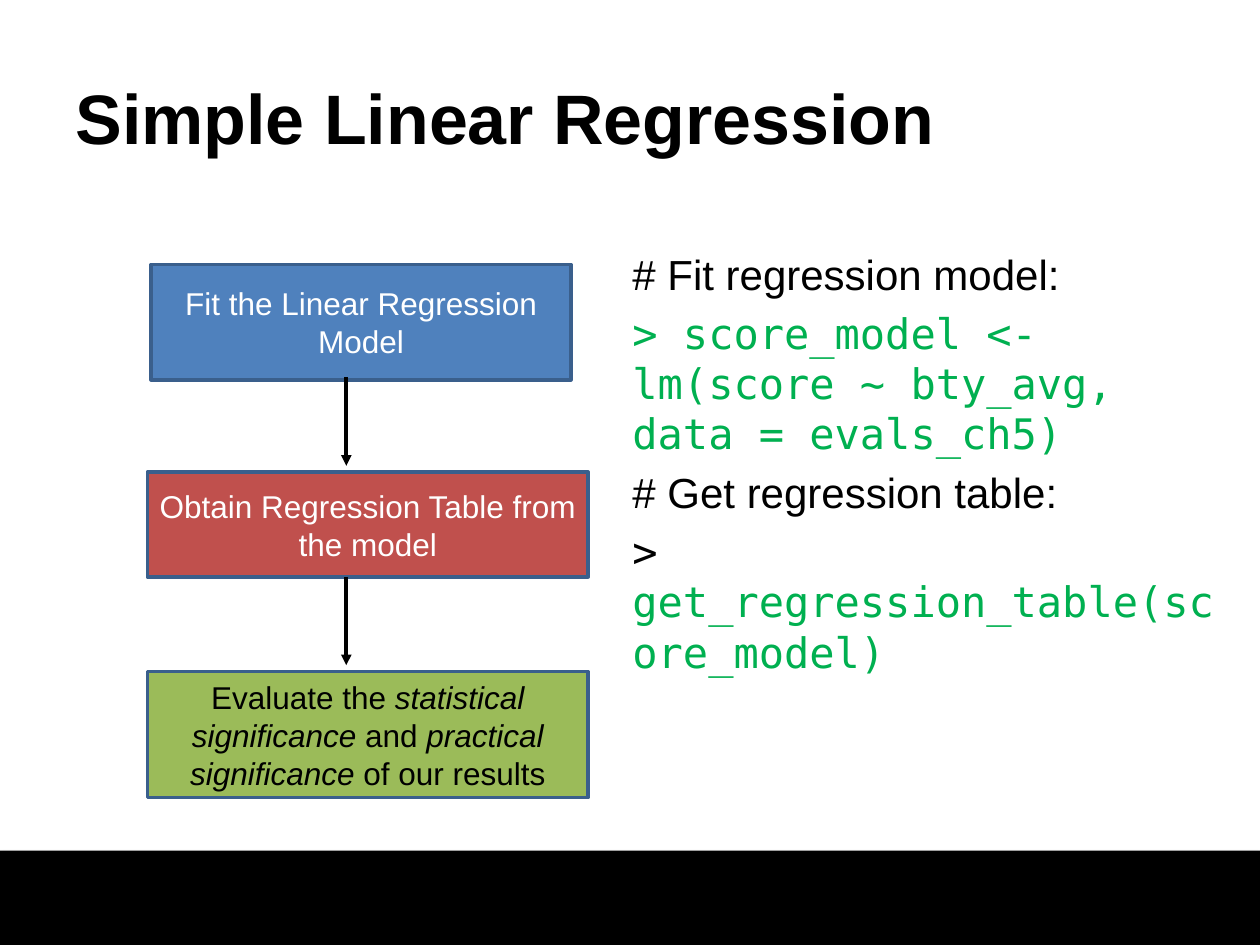
import pptx
import pptx.util
import pptx.dml.color
import pptx.enum.shapes
import pptx.enum.text
import pptx.oxml
import pptx.oxml.ns

Cm = pptx.util.Cm
Pt = pptx.util.Pt
RECT = pptx.enum.shapes.MSO_SHAPE.RECTANGLE
MIDDLE = pptx.enum.text.MSO_ANCHOR.MIDDLE
ALIGN = pptx.enum.text.PP_ALIGN
SANS = "Arial"
MONO = "DejaVu Sans Mono"
COLORS = {
    "black": "000000",
    "white": "FFFFFF",
    "blue": "4F81BD",
    "red": "C0504D",
    "green": "9BBB59",
    "outline": "3A5F8C",
    "code": "00B050",
}
STEPS = [
    (0.08, 0, 8.46, 2.33, "blue", "white",
     [("Fit the Linear Regression Model", False)]),
    (0, 4.19, 8.89, 2.11, "red", "white",
     [("Obtain Regression Table from the model", False)]),
    (0, 8.21, 8.89, 2.54, "green", "black",
     [("Evaluate the ", False), ("statistical significance", True),
      (" and ", False), ("practical significance", True),
      (" of our results", False)]),
]
CODE = [
    (SANS, [("# Fit regression model:", "black")]),
    (MONO, [("> score_model <- lm(score ~ bty_avg, data = evals_ch5)", "code")]),
    (SANS, [("# Get regression table:", "black")]),
    (MONO, [("> ", "black"), ("get_regression_table(score_model)", "code")]),
]


def rgb(name):
    return pptx.dml.color.RGBColor.from_string(COLORS[name])


def set_font(font, size, color, name=SANS):
    font.name = name
    font.size = Pt(size)
    font.color.rgb = rgb(color)


def add_effects(sp, content=""):
    ns = pptx.oxml.ns.nsdecls("a")
    xml = f"<a:effectLst {ns}>{content}</a:effectLst>"
    sp._element.spPr.append(pptx.oxml.parse_xml(xml))


def add_box(slide, left, top, width, height, fill):
    sp = slide.shapes.add_shape(RECT, Cm(left), Cm(top), Cm(width), Cm(height))
    sp.fill.solid()
    sp.fill.fore_color.rgb = rgb(fill)
    return sp


def add_footer(slide, left, top, width, height):
    sp = add_box(slide, left, top, width, height, "black")
    sp.line.fill.background()
    add_effects(
        sp,
        f'<a:outerShdw blurRad="{Pt(3.1)}" dist="{Pt(1.8)}" dir="5400000" rotWithShape="0">'
        '<a:srgbClr val="000000"><a:alpha val="35000"/></a:srgbClr></a:outerShdw>',
    )


def add_title(slide, left, top, width, height):
    sp = slide.shapes.title
    sp.left, sp.top, sp.width, sp.height = Cm(left), Cm(top), Cm(width), Cm(height)
    tf = sp.text_frame
    tf.text = "Simple Linear Regression"
    tf.vertical_anchor = MIDDLE
    p = tf.paragraphs[0]
    p.alignment = ALIGN.LEFT
    set_font(p.font, 40, "black")
    p.font.bold = True


def add_code(slide, left, top, width, height):
    tf = slide.shapes.add_textbox(Cm(left), Cm(top), Cm(width), Cm(height)).text_frame
    tf.word_wrap = True
    for i, (font, runs) in enumerate(CODE):
        p = tf.add_paragraph() if i else tf.paragraphs[0]
        p.space_before = Pt(4.8 if i else 0)
        for text, color in runs:
            r = p.add_run()
            r.text = text
            set_font(r.font, 24, color, font)


def add_step(slide, left, top, width, height, fill, color, runs):
    sp = add_box(slide, left, top, width, height, fill)
    sp.shadow.inherit = False
    sp.line.color.rgb = rgb("outline")
    sp.line.width = Pt(2)
    tf = sp.text_frame
    tf.word_wrap = True
    tf.vertical_anchor = MIDDLE
    p = tf.paragraphs[0]
    p.alignment = ALIGN.CENTER
    set_font(p.font, 18, color)
    for text, italic in runs:
        r = p.add_run()
        r.text = text
        r.font.italic = italic


def add_arrow(slide, x, top, bottom):
    cx = slide.shapes.add_connector(
        pptx.enum.shapes.MSO_CONNECTOR.STRAIGHT, Cm(x), Cm(top), Cm(x), Cm(bottom))
    cx.line.color.rgb = rgb("black")
    cx.line.width = Pt(2)
    ns = pptx.oxml.ns.nsdecls("a")
    cx.line._get_or_add_ln().append(
        pptx.oxml.parse_xml(f'<a:tailEnd {ns} type="triangle"/>'))
    add_effects(cx)


def add_flow(slide, left, top):
    for dx, dy, width, height, fill, color, runs in STEPS:
        add_step(slide, left + dx, top + dy, width, height, fill, color, runs)
    for step in STEPS[1:]:
        end = top + step[1] - 0.13
        add_arrow(slide, left + 4.01, end - 1.78, end)


def main():
    prs = pptx.Presentation()
    prs.slide_width, prs.slide_height = Cm(25.4), Cm(19.05)
    slide = prs.slides.add_slide(prs.slide_layouts[5])
    add_footer(slide, 0, 17.15, 25.4, 1.9)
    add_title(slide, 1.27, 0.76, 22.86, 3.18)
    add_code(slide, 12.5, 4.88, 12.7, 9.53)
    add_flow(slide, 2.97, 5.33)
    prs.save("out.pptx")


if __name__ == "__main__":
    main()
